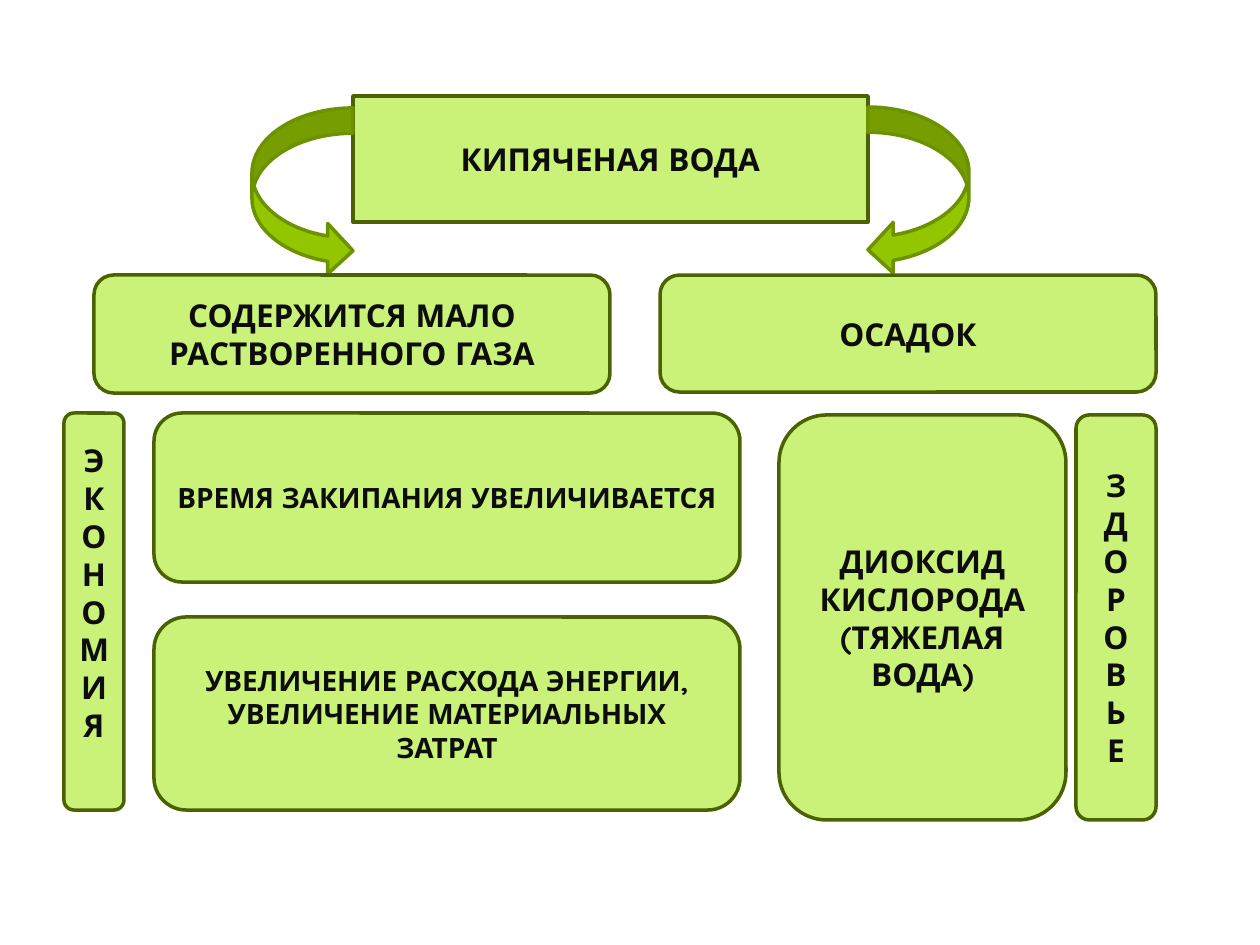
from dataclasses import dataclass

from lxml.etree import SubElement
from pptx import Presentation
from pptx.dml.color import RGBColor
from pptx.enum.shapes import MSO_SHAPE as Shape
from pptx.enum.text import MSO_ANCHOR as Anchor, MSO_AUTO_SIZE as AutoSize, PP_ALIGN as Align
from pptx.oxml.ns import qn
from pptx.util import Emu, Pt

PX_PER_INCH = 126


@dataclass(frozen=True)
class Theme:
    font: str = "Quicksand"
    large: int = 18
    small: int = 16
    line_width: int = 2
    text: str = "0D0D0D"
    box_fill: str = "CAF278"
    box_line: str = "4A6300"
    arrow_fill: str = "94C600"
    arrow_line: str = "6D9200"


THEME = Theme()


@dataclass(frozen=True)
class Area:
    left: int
    top: int
    width: int
    height: int

    def emu(self) -> tuple:
        return tuple(px(n) for n in (self.left, self.top, self.width, self.height))


@dataclass(frozen=True)
class Card:
    area: Area
    text: str
    size: int = THEME.large
    bottom_inset: int = 6


@dataclass(frozen=True)
class Arrow:
    area: Area
    kind: Shape


TITLE = Card(Area(353, 96, 515, 126), "КИПЯЧЕНАЯ ВОДА")
CARDS = (
    Card(Area(94, 275, 516, 118), "СОДЕРЖИТСЯ МАЛО РАСТВОРЕННОГО ГАЗА"),
    Card(Area(660, 275, 496, 117), "ОСАДОК"),
    Card(Area(154, 413, 586, 169), "ВРЕМЯ ЗАКИПАНИЯ УВЕЛИЧИВАЕТСЯ", THEME.small),
    Card(
        Area(154, 617, 586, 193),
        "УВЕЛИЧЕНИЕ РАСХОДА ЭНЕРГИИ,\nУВЕЛИЧЕНИЕ МАТЕРИАЛЬНЫХ ЗАТРАТ",
        THEME.small,
    ),
    Card(Area(64, 413, 60, 397), "\n".join("ЭКОНОМИЯ"), bottom_inset=44),
    Card(Area(779, 415, 287, 405), "ДИОКСИД КИСЛОРОДА (ТЯЖЕЛАЯ ВОДА)"),
    Card(Area(1076, 415, 80, 405), "\n".join("ЗДОРОВЬЕ")),
)
ARROWS = (
    Arrow(Area(252, 108, 101, 168), Shape.CURVED_RIGHT_ARROW),
    Arrow(Area(868, 107, 101, 168), Shape.CURVED_LEFT_ARROW),
)


def px(length: int) -> Emu:
    return Emu(round(length * 914400 / PX_PER_INCH))


def paint(shape, fill: str, line: str) -> None:
    shape.fill.solid()
    shape.fill.fore_color.rgb = RGBColor.from_string(fill)
    shape.line.color.rgb = RGBColor.from_string(line)
    shape.line.width = Pt(THEME.line_width)


def fill_card(shape, card: Card) -> None:
    paint(shape, THEME.box_fill, THEME.box_line)
    frame = shape.text_frame
    frame.text = card.text
    frame.word_wrap = True
    frame.auto_size = AutoSize.NONE
    frame.vertical_anchor = Anchor.MIDDLE
    frame.margin_bottom = px(card.bottom_inset)
    for para in frame.paragraphs:
        para.alignment = Align.CENTER
        para.font.name = THEME.font
        para.font.size = Pt(card.size)
        para.font.bold = True
        para.font.color.rgb = RGBColor.from_string(THEME.text)


def draw_title(page, card: Card) -> None:
    title = page.shapes.title
    title.left, title.top, title.width, title.height = card.area.emu()
    outline = SubElement(title.element.spPr, qn("a:prstGeom"), prst="roundRect")
    SubElement(outline, qn("a:avLst"))
    fill_card(title, card)


def draw_card(page, card: Card) -> None:
    box = page.shapes.add_shape(Shape.ROUNDED_RECTANGLE, *card.area.emu())
    box.shadow.inherit = False
    fill_card(box, card)


def draw_arrow(page, arrow: Arrow) -> None:
    shape = page.shapes.add_shape(arrow.kind, *arrow.area.emu())
    shape.shadow.inherit = False
    paint(shape, THEME.arrow_fill, THEME.arrow_line)


def main() -> None:
    deck = Presentation()
    deck.slide_width, deck.slide_height = px(1260), px(945)
    page = deck.slides.add_slide(deck.slide_layouts.get_by_name("Title Only"))
    draw_title(page, TITLE)
    for arrow in ARROWS:
        draw_arrow(page, arrow)
    for card in CARDS:
        draw_card(page, card)
    deck.save("out.pptx")


if __name__ == "__main__":
    main()
